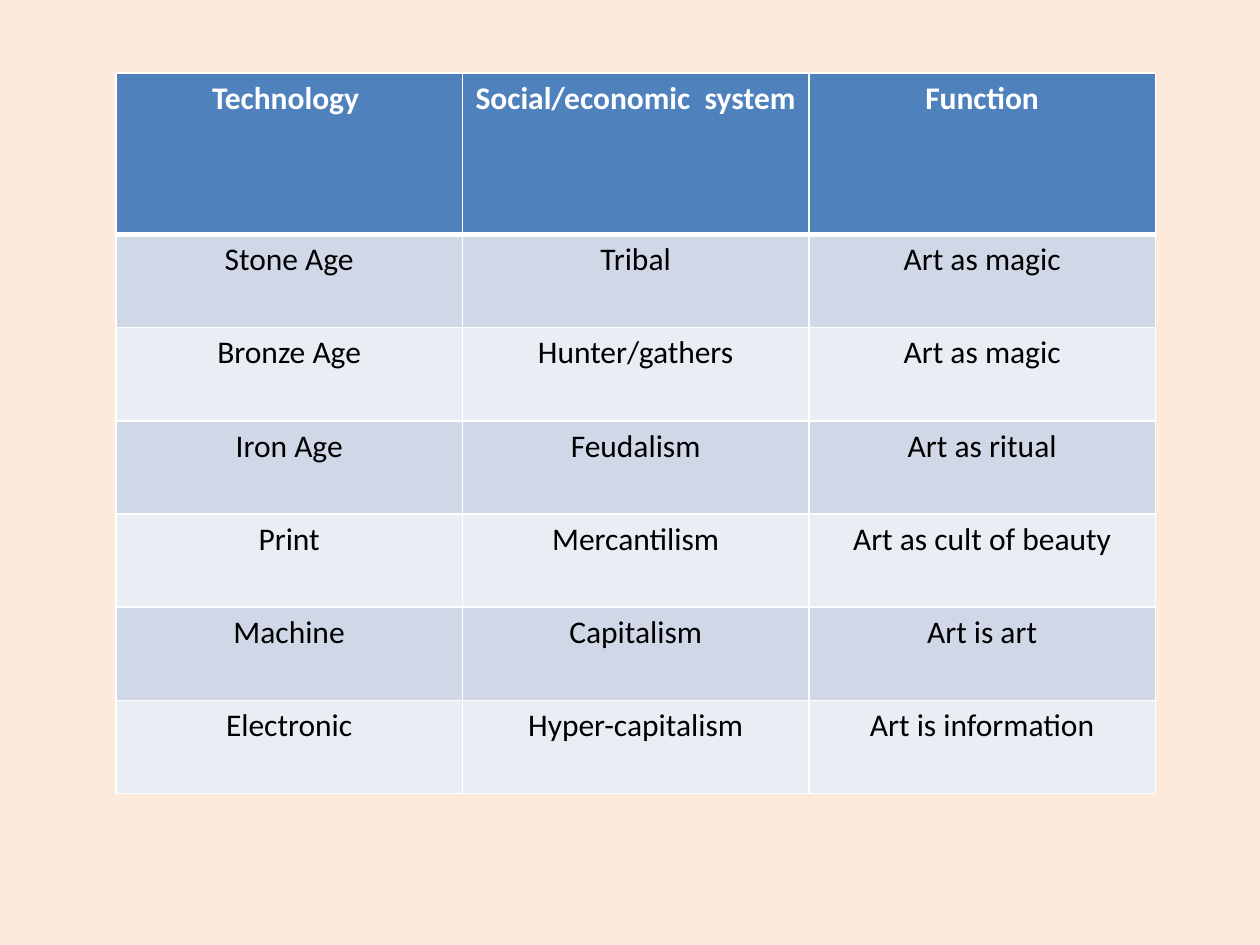
from lxml.etree import SubElement
from pptx import Presentation
from pptx.dml.color import RGBColor
from pptx.enum.text import PP_ALIGN
from pptx.oxml.ns import qn
from pptx.util import Inches, Pt

PEACH = RGBColor(0xFD, 0xEA, 0xDA)
BLUE = RGBColor(0x4F, 0x81, 0xBD)
BAND_DARK = RGBColor(0xD0, 0xD8, 0xE8)
BAND_LIGHT = RGBColor(0xE9, 0xED, 0xF4)
WHITE = RGBColor(0xFF, 0xFF, 0xFF)
BLACK = RGBColor(0x00, 0x00, 0x00)

ROWS = [
    ("Technology ", "Social/economic  system", "Function"),
    ("Stone Age", "Tribal", "Art as magic"),
    ("Bronze Age", "Hunter/gathers", "Art as magic"),
    ("Iron Age", "Feudalism", "Art as ritual"),
    ("Print", "Mercantilism", "Art as cult of beauty"),
    ("Machine", "Capitalism", "Art is art"),
    ("Electronic", "Hyper-capitalism", "Art is information"),
]
HEADER_HEIGHT, ROW_HEIGHT, COLUMN_WIDTH = 1.28, 0.74, 2.75


def add_border(cell, side, points):
    """Draw one white edge of a cell; call before the fill is set."""
    line = SubElement(cell._tc.get_or_add_tcPr(), qn(f"a:ln{side}"), w=str(Pt(points)))
    fill = SubElement(line, qn("a:solidFill"))
    SubElement(fill, qn("a:srgbClr"), val=str(WHITE))


# Slide and background
deck = Presentation()
deck.slide_width, deck.slide_height = Inches(10), Inches(7.5)
page = deck.slides.add_slide(deck.slide_layouts[6])
page.background.fill.solid()
page.background.fill.fore_color.rgb = PEACH

# Table grid
height = HEADER_HEIGHT + ROW_HEIGHT * (len(ROWS) - 1)
table = page.shapes.add_table(
    len(ROWS), 3, Inches(0.92), Inches(0.58), Inches(3 * COLUMN_WIDTH), Inches(height)
).table
for column in table.columns:
    column.width = Inches(COLUMN_WIDTH)

# Cells: blue header, then alternating bands
for row_index, texts in enumerate(ROWS):
    is_header = row_index == 0
    table.rows[row_index].height = Inches(HEADER_HEIGHT if is_header else ROW_HEIGHT)
    band = BAND_DARK if row_index % 2 else BAND_LIGHT
    for column_index, text in enumerate(texts):
        cell = table.cell(row_index, column_index)
        for side in "LRTB":
            under_header = (row_index, side) in ((0, "B"), (1, "T"))
            add_border(cell, side, 3 if under_header else 1)
        cell.fill.solid()
        cell.fill.fore_color.rgb = BLUE if is_header else band

        cell.text_frame.text = text
        para = cell.text_frame.paragraphs[0]
        para.alignment = PP_ALIGN.CENTER
        font = para.runs[0].font
        font.name, font.size, font.bold = "Calibri", Pt(18), is_header
        font.color.rgb = WHITE if is_header else BLACK

deck.save("out.pptx")
